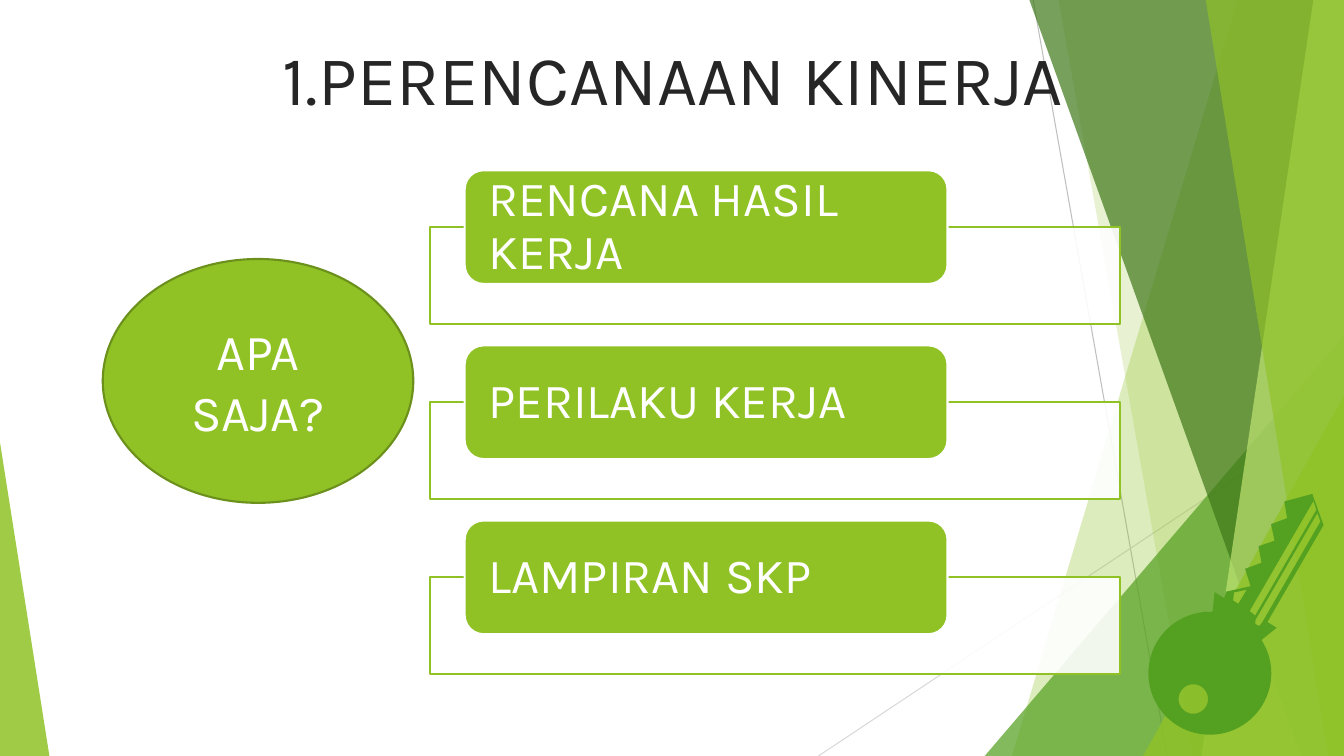
import math

from lxml import etree
from pptx import Presentation
from pptx.dml.color import RGBColor
from pptx.enum.shapes import MSO_CONNECTOR, MSO_SHAPE
from pptx.enum.text import MSO_ANCHOR, PP_ALIGN
from pptx.oxml.ns import qn
from pptx.util import Pt

STRAIGHT = MSO_CONNECTOR.STRAIGHT
TRIANGLE, ELLIPSE = MSO_SHAPE.ISOSCELES_TRIANGLE, MSO_SHAPE.OVAL
RECTANGLE, ROUNDED = MSO_SHAPE.RECTANGLE, MSO_SHAPE.ROUNDED_RECTANGLE
MIDDLE = MSO_ANCHOR.MIDDLE
LEFT, CENTER = PP_ALIGN.LEFT, PP_ALIGN.CENTER

WHITE = RGBColor(0xFF, 0xFF, 0xFF)
INK = RGBColor(0x26, 0x26, 0x26)
LIME = RGBColor(0x90, 0xC2, 0x26)
DARK_LIME = RGBColor(0x6B, 0x90, 0x1C)
PALE_LIME = RGBColor(0xC0, 0xE4, 0x74)
GREEN = RGBColor(0x54, 0xA0, 0x21)
FOREST = RGBColor(0x3F, 0x78, 0x19)
GREY = RGBColor(0xBF, 0xBF, 0xBF)
LIGHT_GREY = RGBColor(0xD9, 0xD9, 0xD9)

FONT = "Karla"
WIDTH, HEIGHT = 960, 540
TOPICS = ["RENCANA HASIL KERJA", "PERILAKU KERJA", "LAMPIRAN SKP"]
TOPIC_TOP, TOPIC_PITCH = 121.6, 125.1

# Slanted bands: top left x, bottom left x, colour, opacity
BANDS_BEHIND = [(884.2, 722.9, LIME, 30), (756, 851.8, LIME, 20)]
BANDS_FRONT = [(735.1, 929.5, FOREST, 70), (938.2, 858.2, PALE_LIME, 70),
               (861.1, 949, LIME, 65)]

# Key parts
HEAD_CENTER, HEAD_RADIUS = (864.2, 480.9), 43.9
HOLE_CENTER, HOLE_RADIUS = (852.4, 499.3), 10.5
BLADE = [(866.2, 436.6), (867.6, 423), (874.4, 427.2), (875.9, 422.6),
         (893.3, 418.7), (889.4, 406.3), (901.1, 402), (899, 390.2),
         (910.4, 386.2), (907.9, 374.4), (919.4, 370.1), (917.4, 358.2),
         (937.4, 352.8), (945.4, 375.1), (905.3, 444.3), (911.9, 448.4),
         (901, 457.2)]
GROOVES = [
    [(890.6, 421.2), (881.5, 423.2), (880.8, 428.8), (884.5, 431.3)],
    [(941, 366.5), (896.8, 442.8), (896.8, 445.9), (899.5, 447.1),
     (901.4, 445), (943.2, 372.5)],
    [(938.2, 357.8), (892.6, 436.5), (896.6, 439.7), (940.3, 364.2)],
]


def paint(shape, color, opacity=100, line=None):
    shape.shadow.inherit = False
    shape.fill.solid()
    shape.fill.fore_color.rgb = color
    if opacity < 100:
        color_node = shape._element.spPr.find(qn("a:solidFill"))[0]
        alpha = etree.SubElement(color_node, qn("a:alpha"))
        alpha.set("val", str(opacity * 1000))
    if line is None:
        shape.line.fill.background()
    else:
        shape.line.color.rgb = line
        shape.line.width = Pt(1.5)


def add_preset(slide, kind, box, color, opacity=100, line=None):
    shape = slide.shapes.add_shape(kind, *map(Pt, box))
    paint(shape, color, opacity, line)
    return shape


def add_triangle(slide, box, apex, opacity, color=LIME):
    add_preset(slide, TRIANGLE, box, color, opacity).adjustments[0] = apex


def add_outline(slide, contours, color, opacity=100):
    contours = [[(Pt(x), Pt(y)) for x, y in contour] for contour in contours]
    builder = slide.shapes.build_freeform(*contours[0][0])
    builder.add_line_segments(contours[0][1:])
    for contour in contours[1:]:
        builder.move_to(*contour[0])
        builder.add_line_segments(contour[1:])
    paint(builder.convert_to_shape(), color, opacity)


def add_band(slide, top_x, bottom_x, color, opacity):
    corners = [(top_x, -0.6), (WIDTH, -0.6), (WIDTH, HEIGHT), (bottom_x, HEIGHT)]
    add_outline(slide, [corners], color, opacity)


def add_thin_line(slide, start, end, color):
    line = slide.shapes.add_connector(STRAIGHT, *map(Pt, start + end))
    line.line.color.rgb = color
    line.line.width = Pt(0.75)
    etree.SubElement(line._element.spPr, qn("a:effectLst"))


def write(shape, text, size, color=WHITE, align=CENTER):
    frame = shape.text_frame
    frame.word_wrap = True
    frame.vertical_anchor = MIDDLE
    frame.text = text
    paragraph = frame.paragraphs[0]
    paragraph.alignment = align
    font = paragraph.runs[0].font
    font.name = FONT
    font.size = Pt(size)
    font.color.rgb = color
    return paragraph


def add_topic(slide, text, top):
    add_preset(slide, RECTANGLE, (307.4, top + 40.5, 492.5, 69.3), WHITE, 90, LIME)
    tab = add_preset(slide, ROUNDED, (331.9, top, 344.9, 81.2), LIME, line=WHITE)
    write(tab, text, 35, align=LEFT).line_spacing = 0.9
    frame = tab.text_frame
    frame.margin_left = frame.margin_right = Pt(13)
    frame.margin_top = frame.margin_bottom = 0


def arc(center, radius, start, end, step=4):
    angles = [math.radians(degree) for degree in range(start, end + 1, step)]
    return [(center[0] + radius * math.cos(angle),
             center[1] + radius * math.sin(angle)) for angle in angles]


def add_key(slide):
    body = arc(HEAD_CENTER, HEAD_RADIUS, -32, 272) + BLADE
    hole = arc(HOLE_CENTER, HOLE_RADIUS, 0, 356)
    add_outline(slide, [body, hole] + GROOVES, GREEN)


def add_backdrop(slide):
    add_thin_line(slide, (738, 0), (833.8, HEIGHT), GREY)
    add_thin_line(slide, (WIDTH, 290.2), (584.6, HEIGHT), LIGHT_GREY)
    for band in BANDS_BEHIND:
        add_band(slide, *band)
    add_triangle(slide, (703.4, 239.8, 256.6, 300.2), 1, 72, GREEN)
    for band in BANDS_FRONT:
        add_band(slide, *band)
    add_triangle(slide, (816.5, 283, 143.5, 257), 1, 80)
    add_triangle(slide, (0, 316.1, 35.3, 223.9), 0, 85)


def main():
    presentation = Presentation()
    presentation.slide_width, presentation.slide_height = Pt(WIDTH), Pt(HEIGHT)
    slide = presentation.slides.add_slide(presentation.slide_layouts[6])

    add_backdrop(slide)

    # Title
    title = slide.shapes.add_textbox(Pt(25.2), Pt(26.6), Pt(911.5), Pt(56.9))
    write(title, "1.PERENCANAAN KINERJA", 50, INK).space_before = Pt(10)

    # Question and its three answers
    question = add_preset(slide, ELLIPSE, (73.4, 185, 221.8, 174.2), LIME,
                          line=DARK_LIME)
    write(question, "APA SAJA?", 36)
    for index, topic in enumerate(TOPICS):
        add_topic(slide, topic, TOPIC_TOP + index * TOPIC_PITCH)

    add_key(slide)
    presentation.save("out.pptx")


if __name__ == "__main__":
    main()
